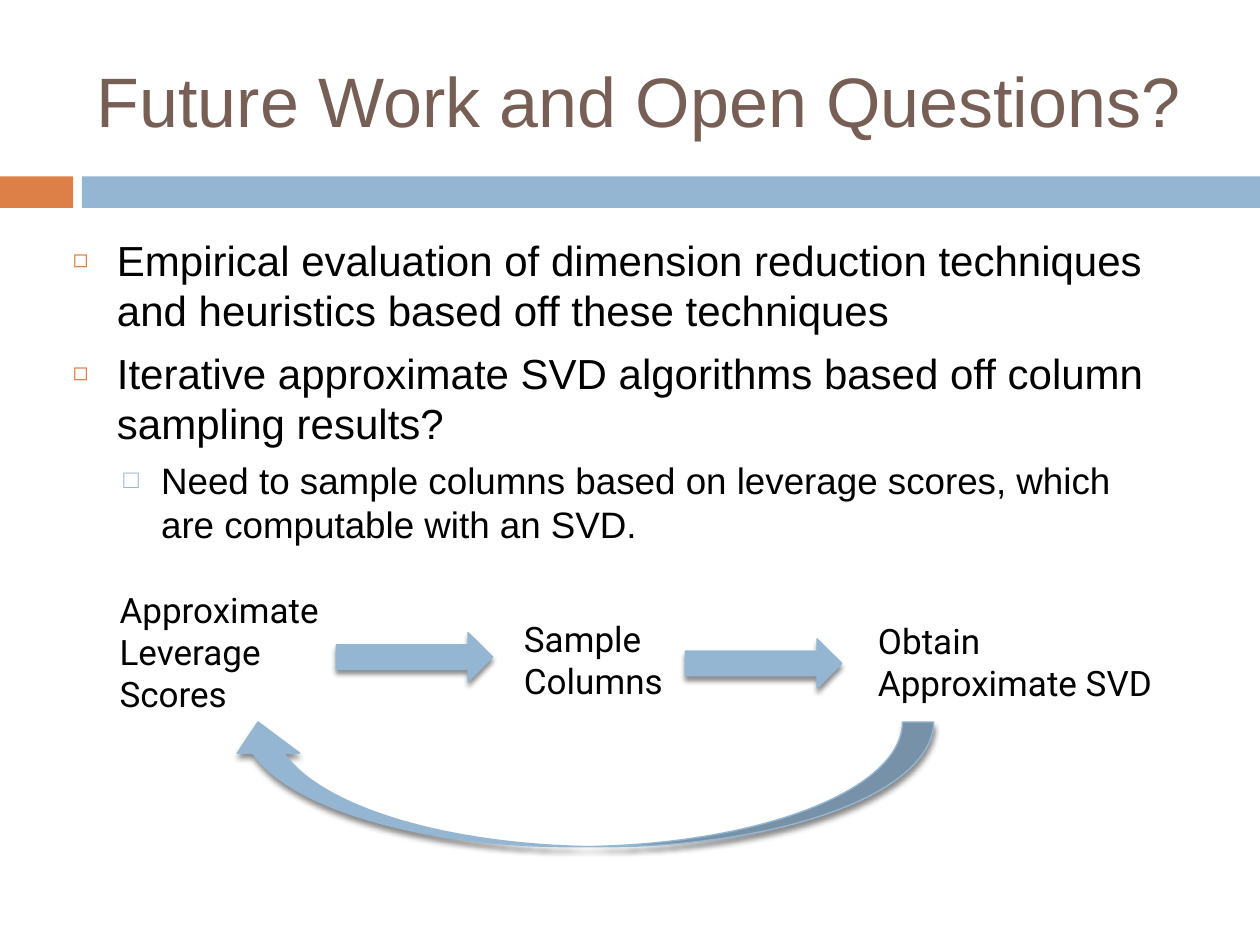
"""Build the slide on future work and open questions."""
from lxml import etree
from pptx import Presentation
from pptx.dml.color import RGBColor
from pptx.enum.shapes import MSO_SHAPE
from pptx.enum.text import MSO_ANCHOR
from pptx.oxml import parse_xml
from pptx.oxml.ns import nsdecls, qn
from pptx.util import Inches, Pt

RECTANGLE = MSO_SHAPE.RECTANGLE
RIGHT_ARROW = MSO_SHAPE.RIGHT_ARROW
CURVED_UP_ARROW = MSO_SHAPE.CURVED_UP_ARROW
TOP, MIDDLE = MSO_ANCHOR.TOP, MSO_ANCHOR.MIDDLE

ORANGE = RGBColor(0xDD, 0x80, 0x47)
BLUE = RGBColor(0x94, 0xB6, 0xD2)
BROWN = RGBColor(0x77, 0x5F, 0x55)
BLACK = RGBColor(0, 0, 0)

prs = Presentation()
prs.slide_width, prs.slide_height = Inches(10), Inches(7.5)
slide = prs.slides.add_slide(prs.slide_layouts[6])


def add_text(box, paragraphs, size=20, font="Roboto", color=BLACK, anchor=TOP):
    frame = slide.shapes.add_textbox(*map(Inches, box)).text_frame
    frame.word_wrap = True
    frame.vertical_anchor = anchor
    for index, text in enumerate(paragraphs):
        paragraph = frame.add_paragraph() if index else frame.paragraphs[0]
        run = paragraph.add_run()
        run.text = text
        run.font.size = Pt(size)
        run.font.name = font
        run.font.color.rgb = color
    return frame


def add_block(kind, box, color, raised=False):
    block = slide.shapes.add_shape(kind, *map(Inches, box))
    block.shadow.inherit = False
    block.fill.solid()
    block.fill.fore_color.rgb = color
    if not raised:
        block.line.fill.background()
        return block
    block.line.color.rgb = color
    block.line.width = Pt(0.79)
    effects = block._element.spPr.find(qn("a:effectLst"))
    effects.append(parse_xml(
        f'<a:outerShdw {nsdecls("a")} blurRad="{Pt(3)}" dist="{Pt(2.4)}" '
        'dir="5400000" rotWithShape="0"><a:srgbClr val="000000">'
        '<a:alpha val="45000"/></a:srgbClr></a:outerShdw>'))
    return block


add_block(RECTANGLE, (0, 1.4, 0.58, 0.25), ORANGE)
add_block(RECTANGLE, (0.65, 1.4, 9.35, 0.25), BLUE)
add_text((0.67, 0.25, 8.92, 1.08), ["Future Work and Open Questions?"],
         size=40, font="Arial", color=BROWN, anchor=MIDDLE)

topics = [
    ("Empirical evaluation of dimension reduction techniques and heuristics "
     "based off these techniques", 0),
    ("Iterative approximate SVD algorithms based off column sampling results?", 0),
    ("Need to sample columns based on leverage scores, which are computable "
     "with an SVD.", 1),
]
levels = [
    (24, 7, 0.35, 0.35, "◻", ORANGE, 60),
    (21, 5.5, 0.7, 0.3, "□", BLUE, 70),
]
body = add_text((0.48, 1.81, 8.92, 3.76), [text for text, level in topics],
                size=24, font="Arial")
for paragraph, (text, level) in zip(body.paragraphs, topics):
    size, space, margin, hanging, bullet, color, percent = levels[level]
    paragraph.level = level
    paragraph.space_before = Pt(space)
    paragraph.runs[0].font.size = Pt(size)
    properties = paragraph._p.get_or_add_pPr()
    properties.set("marL", str(Inches(margin)))
    properties.set("indent", str(-Inches(hanging)))
    bullet_color = etree.SubElement(properties, qn("a:buClr"))
    etree.SubElement(bullet_color, qn("a:srgbClr"), val=str(color))
    etree.SubElement(properties, qn("a:buSzPct"), val=str(percent * 1000))
    etree.SubElement(properties, qn("a:buFont"), typeface="Arial")
    etree.SubElement(properties, qn("a:buChar"), char=bullet)

for step, box in [
    ("Approximate Leverage Scores", (0.85, 4.62, 1.81, 1.11)),
    ("Sample Columns", (4.06, 4.85, 1.81, 0.77)),
    ("Obtain Approximate SVD", (6.87, 4.87, 2.53, 0.77)),
]:
    add_text(box, [step])

for left, top in [(2.67, 5.02), (5.44, 5.07)]:
    add_block(RIGHT_ARROW, (left, top, 1.24, 0.39), BLUE, raised=True)

feedback = add_block(CURVED_UP_ARROW, (1.8, 5.73, 5.61, 0.99), BLUE, raised=True)
feedback._element.spPr.find(qn("a:xfrm")).set("flipH", "1")

prs.save("out.pptx")
